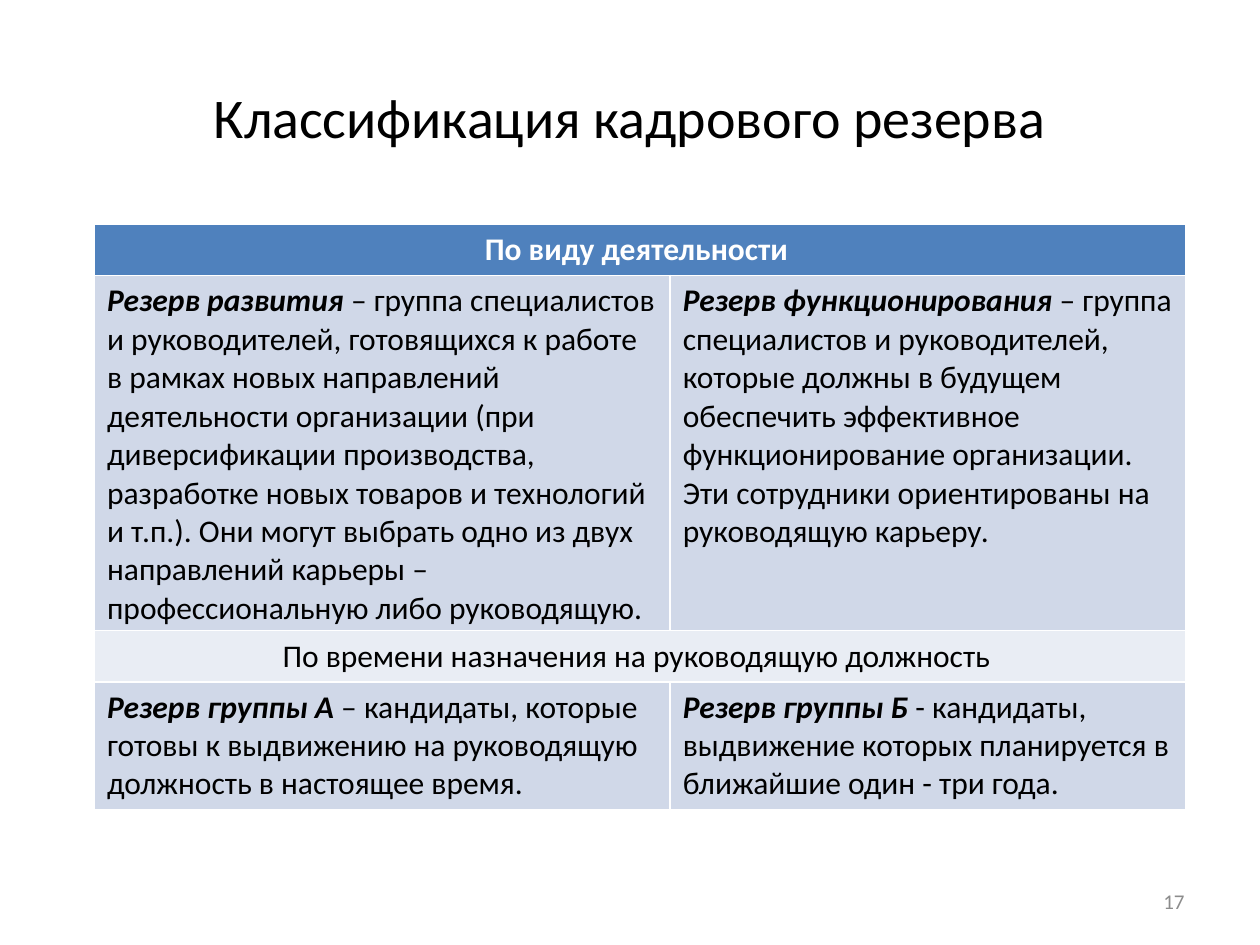
from pptx import Presentation
from pptx.dml.color import RGBColor
from pptx.enum.text import MSO_ANCHOR, PP_ALIGN
from pptx.util import Pt

BLACK = RGBColor(0x00, 0x00, 0x00)
WHITE = RGBColor(0xFF, 0xFF, 0xFF)
GRAY = RGBColor(0x8C, 0x8C, 0x8C)
BLUE = RGBColor(0x4F, 0x81, 0xBD)
BAND = RGBColor(0xD0, 0xD8, 0xE8)
LIGHT_BAND = RGBColor(0xE9, 0xED, 0xF4)


def style(paragraph, size, color, align):
    paragraph.alignment = align
    font = paragraph.font
    font.name, font.size, font.color.rgb = "Calibri", Pt(size), color


prs = Presentation()
prs.slide_width, prs.slide_height = Pt(720), Pt(540)
slide = prs.slides.add_slide(prs.slide_layouts[5])

title = slide.shapes.title
title.left, title.top, title.width, title.height = Pt(36), Pt(21.6), Pt(648), Pt(90)
title.text_frame.text = "Классификация кадрового резерва"
title.text_frame.vertical_anchor = MSO_ANCHOR.MIDDLE
style(title.text_frame.paragraphs[0], 32, BLACK, PP_ALIGN.CENTER)

page_number = slide.shapes.add_textbox(Pt(516), Pt(500.5), Pt(168), Pt(28.75)).text_frame
page_number.word_wrap = True
page_number.vertical_anchor = MSO_ANCHOR.MIDDLE
page_number.text = "17"
style(page_number.paragraphs[0], 12, GRAY, PP_ALIGN.RIGHT)

column_widths = [329, 294.5]
row_heights = [29.2, 203, 29.2, 73]
classification = slide.shapes.add_table(
    4, 2, Pt(54), Pt(128.2), Pt(sum(column_widths)), Pt(sum(row_heights))
).table
for column, width in zip(classification.columns, column_widths):
    column.width = Pt(width)
for row, height in zip(classification.rows, row_heights):
    row.height = Pt(height)

criteria = [
    (0, "По виду деятельности ", BLUE, WHITE, True),
    (2, "По времени назначения на руководящую должность ", LIGHT_BAND, BLACK, False),
]
for row, criterion, fill, color, bold in criteria:
    heading = classification.cell(row, 0)
    heading.merge(classification.cell(row, 1))
    heading.fill.solid()
    heading.fill.fore_color.rgb = fill
    heading.text = criterion
    paragraph = heading.text_frame.paragraphs[0]
    style(paragraph, 18, color, PP_ALIGN.CENTER)
    paragraph.font.bold = bold

reserves = [
    (1, 0, "Резерв развития ",
     "– группа специалистов и руководителей, готовящихся к работе в рамках новых "
     "направлений деятельности организации (при диверсификации производства, "
     "разработке новых товаров и технологий и т.п.). Они могут выбрать одно из двух "
     "направлений карьеры – профессиональную либо руководящую."),
    (1, 1, "Резерв функционирования ",
     "– группа специалистов и руководителей, которые должны в будущем обеспечить "
     "эффективное функционирование организации. Эти сотрудники ориентированы на "
     "руководящую карьеру."),
    (3, 0, "Резерв группы А ",
     "– кандидаты, которые готовы к выдвижению на руководящую должность в настоящее время."),
    (3, 1, "Резерв группы Б ",
     "- кандидаты, выдвижение которых планируется в ближайшие один - три года."),
]
for row, column, term, definition in reserves:
    cell = classification.cell(row, column)
    cell.fill.solid()
    cell.fill.fore_color.rgb = BAND
    paragraph = cell.text_frame.paragraphs[0]
    style(paragraph, 18, BLACK, PP_ALIGN.LEFT)
    for text, emphasized in ((term, True), (definition, False)):
        run = paragraph.add_run()
        run.text = text
        run.font.bold = run.font.italic = emphasized

prs.save("out.pptx")
